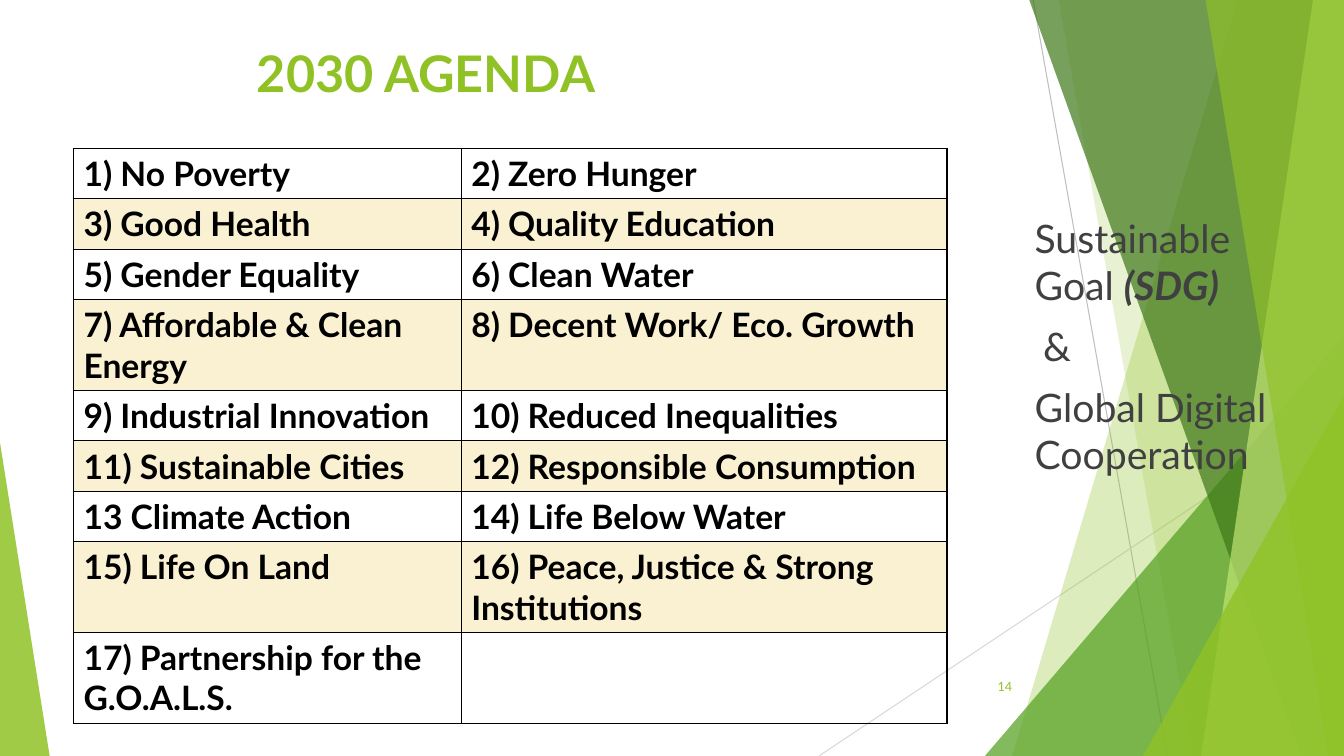
from pptx import Presentation
from pptx import util as u
from pptx.dml.color import RGBColor
from pptx.enum import shapes as sh, text as tx
from pptx.oxml.ns import qn
from lxml import etree

Pt = u.Pt
FONT = "Lato"
LIME, DARK, BLACK, CREAM = "90C226", "404040", "000000", "FAF1D2"
WIDE, HIGH, TOP = 960, 540, -0.7

# Left edge of each band at top and bottom, colour, opacity
BANDS = [
    (884, 723, LIME, 30),
    (756, 852, LIME, 20),
    (735, 929.5, "3F7819", 70),
    (938, 858, "C0E474", 70),
    (861, 949, LIME, 65),
]
GOALS = [
    ("1) No Poverty", "2) Zero Hunger"),
    ("3) Good Health", "4) Quality Education"),
    ("5) Gender Equality", "6) Clean Water"),
    ("7) Affordable & Clean Energy", "8) Decent Work/ Eco. Growth"),
    ("9) Industrial Innovation", "10) Reduced Inequalities"),
    ("11) Sustainable Cities", "12) Responsible Consumption"),
    ("13 Climate Action", "14) Life Below Water"),
    ("15) Life On Land", "16) Peace, Justice & Strong Institutions"),
    ("17) Partnership for the G.O.A.L.S.", ""),
]
TALL = (3, 7, 8)  # rows whose text takes two lines


def rgb(code):
    return RGBColor.from_string(code)


def box(*sides):
    return [Pt(side) for side in sides]


def paint(shape, code, alpha):
    shape.shadow.inherit = False
    shape.line.fill.background()
    shape.fill.solid()
    shape.fill.fore_color.rgb = rgb(code)
    color = shape.fill._xPr.find(qn("a:solidFill"))[0]
    etree.SubElement(color, qn("a:alpha"), val=str(alpha * 1000))


def add_line(slide, start, end, code):
    line = slide.shapes.add_connector(
        sh.MSO_CONNECTOR.STRAIGHT, *box(*start, *end))
    line.line.color.rgb = rgb(code)
    line.line.width = Pt(0.75)
    etree.SubElement(line._element.spPr, qn("a:effectLst"))


def add_band(slide, top, base, code, alpha):
    form = slide.shapes.build_freeform(Pt(top), Pt(TOP))
    form.add_line_segments(
        [box(WIDE, TOP), box(WIDE, HIGH), box(base, HIGH)], close=True)
    paint(form.convert_to_shape(), code, alpha)


def add_wedge(slide, left, top, width, peak, code, alpha):
    wedge = slide.shapes.add_shape(
        sh.MSO_SHAPE.ISOSCELES_TRIANGLE, *box(left, top, width, HIGH - top))
    wedge.adjustments[0] = peak
    paint(wedge, code, alpha)


def add_run(para, words, size, code, bold=False, slant=False):
    run = para.add_run()
    run.text = words
    font = run.font
    font.name, font.size = FONT, Pt(size)
    font.bold, font.italic = bold, slant
    font.color.rgb = rgb(code)


def add_text(slide, place, paras, size, code, anchor, align, inset=3.6):
    frame = slide.shapes.add_textbox(*box(*place)).text_frame
    frame.word_wrap = True
    frame.vertical_anchor = anchor
    frame.margin_top = Pt(inset)
    for i, runs in enumerate(paras):
        para = frame.add_paragraph() if i else frame.paragraphs[0]
        para.alignment = align
        para.space_before = Pt(10 if i else 0)
        for words, *style in runs:
            add_run(para, words, size, code, *style)


def add_edges(cell):
    props = cell._tc.get_or_add_tcPr()
    for i, side in enumerate(("lnL", "lnR", "lnT", "lnB")):
        edge = etree.Element(qn("a:" + side), w=str(Pt(1)))
        fill = etree.SubElement(edge, qn("a:solidFill"))
        etree.SubElement(fill, qn("a:srgbClr"), val=BLACK)
        props.insert(i, edge)


def add_goals(slide):
    table = slide.shapes.add_table(
        len(GOALS), 2, *box(52.5, 106, 624, 410)).table
    table.first_row = table.horz_banding = False
    for col, width in zip(table.columns, (277, 347)):
        col.width = Pt(width)
    for r, pair in enumerate(GOALS):
        table.rows[r].height = Pt(64.8 if r in TALL else 36)
        for c, goal in enumerate(pair):
            cell = table.cell(r, c)
            if r % 2:
                cell.fill.solid()
                cell.fill.fore_color.rgb = rgb(CREAM)
            else:
                cell.fill.background()
            add_edges(cell)
            if goal:
                add_run(cell.text_frame.paragraphs[0], goal, 24, BLACK, True)


def main():
    deck = Presentation()
    deck.slide_width, deck.slide_height = box(WIDE, HIGH)
    slide = deck.slides.add_slide(deck.slide_layouts[6])

    # Backdrop of lines, bands and wedges
    add_line(slide, (738, 0), (834, HIGH), "BFBFBF")
    add_line(slide, (WIDE, 290), (585, HIGH), "D9D9D9")
    for band in BANDS[:2]:
        add_band(slide, *band)
    add_wedge(slide, 703.5, 240, 256.5, 1, "54A021", 72)
    for band in BANDS[2:]:
        add_band(slide, *band)
    add_wedge(slide, 816.5, 283, 143.5, 1, LIME, 80)
    add_wedge(slide, 0, 316, 35.5, 0, LIME, 85)

    # Title, goals, side text and page number
    left, right = tx.PP_ALIGN.LEFT, tx.PP_ALIGN.RIGHT
    anchor = tx.MSO_ANCHOR
    add_text(slide, (176.5, 24, 304, 52.5), [[("2030 AGENDA", True)]],
             36, LIME, anchor.BOTTOM, left)
    add_goals(slide)
    side = [
        [("Sustainable Goal ",), ("(SDG)", True, True)],
        [(" ", True, True), ("&",)],
        [("Global Digital Cooperation",)],
    ]
    add_text(slide, (732, 106, 191.5, 384.5), side,
             28, DARK, anchor.TOP, left, 47)
    add_text(slide, (676, 476, 54, 29), [[("14",)]],
             9, LIME, anchor.MIDDLE, right)

    deck.save("out.pptx")


if __name__ == "__main__":
    main()
